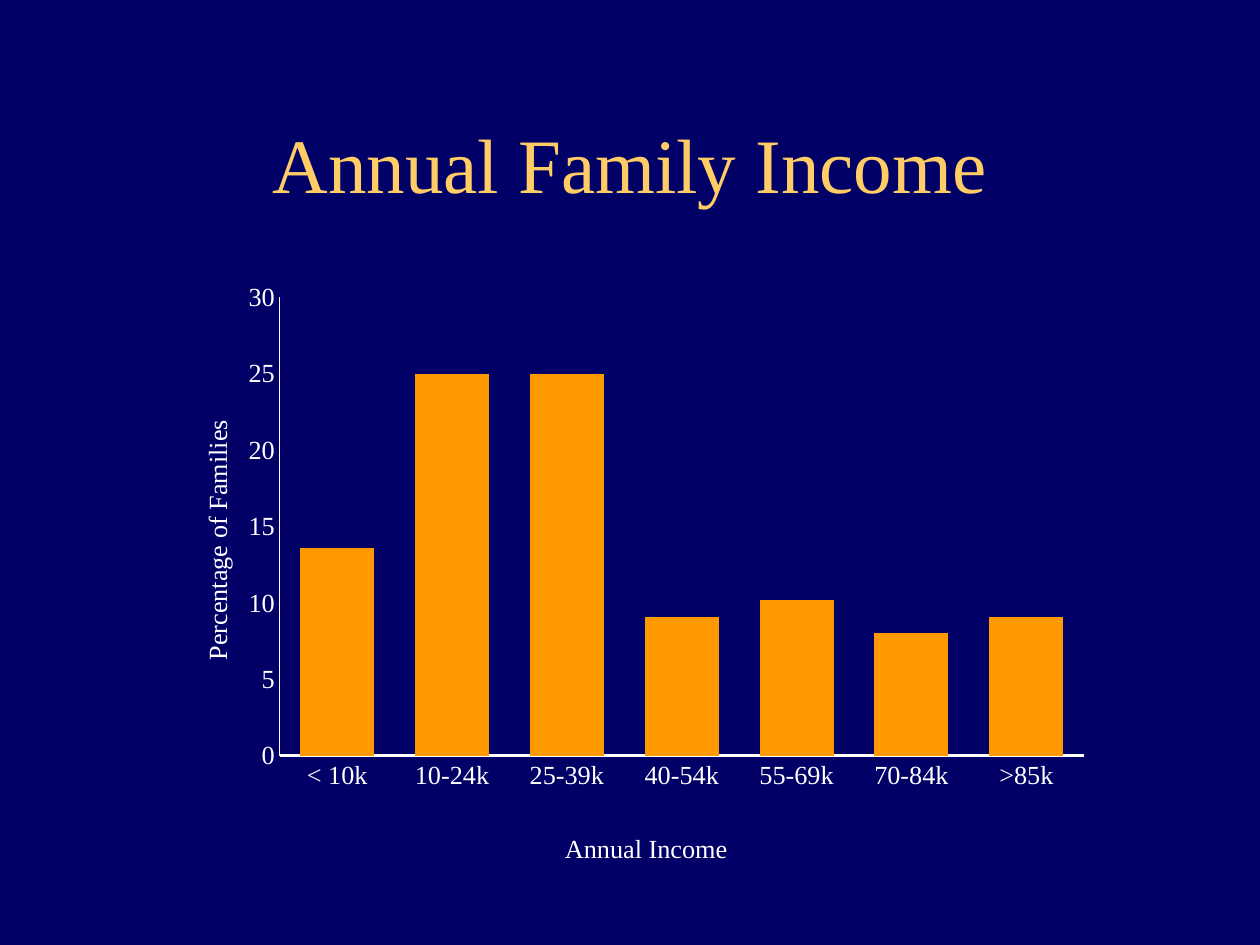
import pptx
import pptx.chart.data
import pptx.dml.color
import pptx.enum.chart
import pptx.enum.text
import pptx.oxml
import pptx.oxml.ns
import pptx.util
from pptx.util import Inches

TITLE = "Annual Family Income"
INCOME_SHARES = [
    ("< 10k", 13.6),
    ("10-24k", 25),
    ("25-39k", 25),
    ("40-54k", 9.1),
    ("55-69k", 10.2),
    ("70-84k", 8),
    (">85k", 9.1),
]
COLORS = {"background": "000066", "title": "FFCC66", "text": "FFFFFF", "bars": "FF9900"}
FONT = "Times New Roman"


def rgb(name):
    return pptx.dml.color.RGBColor.from_string(COLORS[name])


def style_font(font, size, color):
    font.name = FONT
    font.size = pptx.util.Pt(size)
    font.bold = False
    font.color.rgb = rgb(color)


def set_layout(parent, index, inner=False, **fractions):
    for old in parent.findall(pptx.oxml.ns.qn("c:layout")):
        parent.remove(old)
    target = '<c:layoutTarget val="inner"/>' if inner else ""
    modes = '<c:xMode val="edge"/><c:yMode val="edge"/>'
    values = "".join(f'<c:{key} val="{value}"/>' for key, value in fractions.items())
    parent.insert(index, pptx.oxml.parse_xml(
        f'<c:layout {pptx.oxml.ns.nsdecls("c")}><c:manualLayout>'
        f"{target}{modes}{values}</c:manualLayout></c:layout>"))


def style_axis(axis, caption, line_width, x, y):
    axis.has_major_gridlines = False
    axis.major_tick_mark = pptx.enum.chart.XL_TICK_MARK.NONE
    axis.minor_tick_mark = pptx.enum.chart.XL_TICK_MARK.NONE
    axis.format.line.color.rgb = rgb("text")
    axis.format.line.width = pptx.util.Pt(line_width)
    style_font(axis.tick_labels.font, 15, "text")
    caption_frame = axis.axis_title.text_frame
    caption_frame.text = caption
    style_font(caption_frame.paragraphs[0].runs[0].font, 15, "text")
    set_layout(axis.axis_title._element, 1, x=x, y=y)


def add_income_chart(slide):
    income = pptx.chart.data.CategoryChartData()
    income.categories = [bracket for bracket, share in INCOME_SHARES]
    income.add_series("Series 1", [share for bracket, share in INCOME_SHARES])
    chart = slide.shapes.add_chart(
        pptx.enum.chart.XL_CHART_TYPE.COLUMN_STACKED,
        Inches(1.33), Inches(2.17), Inches(7.42), Inches(4.75), income).chart
    chart.has_legend = False
    chart.has_title = False
    style_font(chart.font, 15, "text")

    plot = chart.plots[0]
    plot.gap_width = 55
    plot.overlap = 100
    plot.vary_by_categories = False
    bars = plot.series[0]
    bars.format.fill.solid()
    bars.format.fill.fore_color.rgb = rgb("bars")
    bars.invert_if_negative = False

    style_axis(chart.category_axis, "Annual Income", 1.5, 0.42, 0.93)
    style_axis(chart.value_axis, "Percentage of Families", 0.75, 0.03, 0.24)
    chart.value_axis.minimum_scale = 0
    chart.value_axis.maximum_scale = 30
    chart.value_axis.major_unit = 5
    plot_area = chart._chartSpace.chart.plotArea
    set_layout(plot_area, 0, inner=True, x=0.12, y=0.04, w=0.86, h=0.77)


def main():
    deck = pptx.Presentation()
    deck.slide_width, deck.slide_height = Inches(10), Inches(7.5)
    slide = deck.slides.add_slide(deck.slide_layouts[5])
    slide.background.fill.solid()
    slide.background.fill.fore_color.rgb = rgb("background")

    add_income_chart(slide)

    title = slide.shapes.title
    title.left, title.top = Inches(0.75), Inches(0.67)
    title.width, title.height = Inches(8.5), Inches(1.25)
    title.text_frame.text = TITLE
    title.text_frame.vertical_anchor = pptx.enum.text.MSO_ANCHOR.MIDDLE
    heading = title.text_frame.paragraphs[0]
    heading.alignment = pptx.enum.text.PP_ALIGN.CENTER
    style_font(heading.runs[0].font, 44, "title")

    deck.save("out.pptx")


if __name__ == "__main__":
    main()
